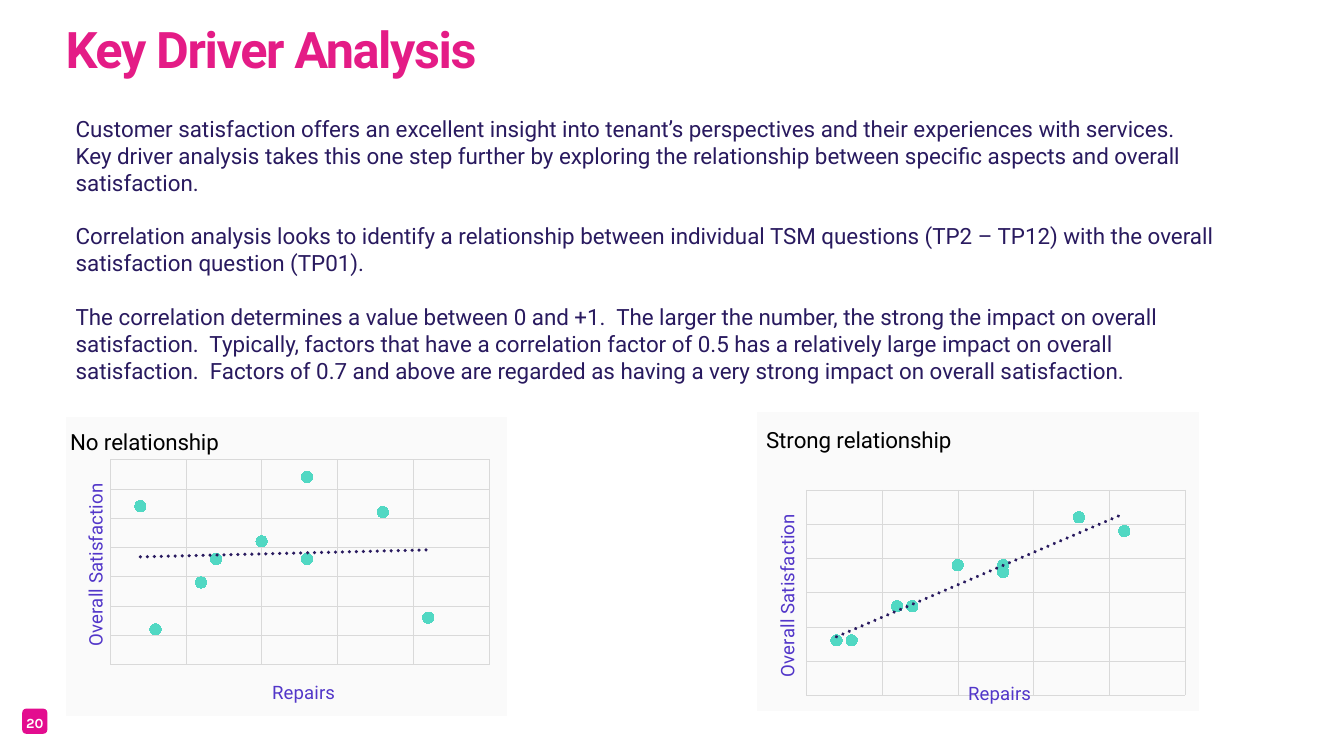
from lxml import etree
from pptx import Presentation
from pptx.chart.data import XyChartData
from pptx.dml.color import RGBColor
from pptx.enum.chart import XL_CHART_TYPE, XL_MARKER_STYLE
from pptx.enum.shapes import MSO_SHAPE
from pptx.enum.text import MSO_ANCHOR, MSO_AUTO_SIZE, PP_ALIGN
from pptx.oxml import parse_xml
from pptx.oxml.ns import nsdecls, qn
from pptx.util import Inches, Pt

SCATTER = XL_CHART_TYPE.XY_SCATTER
CIRCLE = XL_MARKER_STYLE.CIRCLE
ROUNDED = MSO_SHAPE.ROUNDED_RECTANGLE
LEFT, CENTER = PP_ALIGN.LEFT, PP_ALIGN.CENTER
TOP, BOTTOM = MSO_ANCHOR.TOP, MSO_ANCHOR.BOTTOM
NO_FIT, GROW = MSO_AUTO_SIZE.NONE, MSO_AUTO_SIZE.SHAPE_TO_FIT_TEXT

PINK = RGBColor(0xE4, 0x1C, 0x86)
BADGE_PINK = RGBColor(0xE3, 0x0D, 0x8F)
NAVY = RGBColor(0x29, 0x1A, 0x5F)
PURPLE = RGBColor(0x52, 0x36, 0xC9)
TEAL = RGBColor(0x51, 0xD8, 0xC3)
PANEL = RGBColor(0xFA, 0xFA, 0xFA)
GRID = RGBColor(0xD9, 0xD9, 0xD9)
BLACK = RGBColor(0, 0, 0)
WHITE = RGBColor(0xFF, 0xFF, 0xFF)

# Content
TITLE = "Key Driver Analysis"
PAGE_NUMBER = "20"
BODY = [
    "Customer satisfaction offers an excellent insight into tenant’s perspectives and their "
    "experiences with services.  Key driver analysis takes this one step further by exploring "
    "the relationship between specific aspects and overall satisfaction.",
    "Correlation analysis looks to identify a relationship between individual TSM questions "
    "(TP2 – TP12) with the overall satisfaction question (TP01).",
    "The correlation determines a value between 0 and +1.  The larger the number, the strong "
    "the impact on overall satisfaction.  Typically, factors that have a correlation factor of "
    "0.5 has a relatively large impact on overall satisfaction.  Factors of 0.7 and above are "
    "regarded as having a very strong impact on overall satisfaction.",
]
X_TITLE, Y_TITLE = "Repairs", "Overall Satisfaction"
REPAIRS = [0.7, 1.8, 2.6, 1.5, 0.8, 1.2, 2.3, 1.8, 1.1]
CHART_SIZE = (4.38, 2.96)
# Title and plot positions are fractions of the chart's size
CHARTS = [
    {"title": "No relationship", "at": (0.65, 4.14), "y_max": 3.5,
     "satisfaction": [2.7, 3.2, 0.8, 2.1, 0.6, 1.8, 2.6, 1.8, 1.4],
     "plot": (0.1, 0.14, 0.86, 0.69), "title_at": (0, 0.02),
     "x_title_at": (0.46, 0.87), "y_title_at": (0.03, 0.21)},
    {"title": "Strong relationship", "at": (7.51, 4.09), "y_max": 3,
     "satisfaction": [0.8, 1.9, 2.4, 1.9, 0.8, 1.3, 2.6, 1.8, 1.3],
     "plot": (0.11, 0.26, 0.86, 0.69), "title_at": (0.01, 0.03),
     "x_title_at": (0.47, 0.89), "y_title_at": (0.03, 0.33)},
]


def apply(target, **values):
    for name, value in values.items():
        setattr(target, name, value)


def set_font(font, size, color, name="Roboto", bold=False):
    apply(font, size=Pt(size), name=name, bold=bold)
    font.color.rgb = color


def place(shape, left, top, width, height):
    apply(shape, left=Inches(left), top=Inches(top),
          width=Inches(width), height=Inches(height))


def manual_layout(fractions, inner=False):
    target = '<c:layoutTarget val="inner"/>' if inner else ""
    modes = "".join(f'<c:{axis}Mode val="edge"/>' for axis in "xy")
    sizes = "".join(f'<c:{key} val="{value}"/>' for key, value in zip("xywh", fractions))
    return parse_xml(f'<c:layout {nsdecls("c")}><c:manualLayout>{target}{modes}{sizes}'
                     '</c:manualLayout></c:layout>')


def set_layout(parent, index, layout):
    for old in parent.findall(qn("c:layout")):
        parent.remove(old)
    parent.insert(index, layout)


def write_chart_title(title, text, position, size, color):
    paragraph = title.text_frame.paragraphs[0]
    run = paragraph.add_run()
    run.text = text
    set_font(run.font, size, color)
    set_layout(title._element, 1, manual_layout(position))


def format_axis(axis, minimum, maximum):
    apply(axis, minimum_scale=minimum, maximum_scale=maximum, major_unit=0.5,
          has_major_gridlines=True, visible=False)
    line = axis.major_gridlines.format.line
    line.color.rgb = GRID
    line.width = Pt(0.25)


def add_scatter(slide, panel):
    data = XyChartData()
    points = data.add_series("Series 1")
    for x, y in zip(REPAIRS, panel["satisfaction"]):
        points.add_data_point(x, y)
    box = [Inches(value) for value in panel["at"] + CHART_SIZE]
    chart = slide.shapes.add_chart(SCATTER, *box, data).chart
    apply(chart, has_legend=False, has_title=True)
    set_font(chart.font, 10, NAVY)

    # Panel and plot area
    chart_space = chart._chartSpace
    chart_element = chart_space.find(qn("c:chart"))
    chart_element.addnext(parse_xml(
        f'<c:spPr {nsdecls("c", "a")}><a:solidFill><a:srgbClr val="{PANEL}"/></a:solidFill>'
        f'<a:ln w="9525"><a:solidFill><a:srgbClr val="{PANEL}"/></a:solidFill></a:ln></c:spPr>'))
    set_layout(chart_element.find(qn("c:plotArea")), 0, manual_layout(panel["plot"], inner=True))

    # Axes and titles
    x_axis, y_axis = chart.category_axis, chart.value_axis
    format_axis(x_axis, 0.5, 3)
    format_axis(y_axis, 0, panel["y_max"])
    write_chart_title(chart.chart_title, panel["title"], panel["title_at"], 16, BLACK)
    write_chart_title(x_axis.axis_title, X_TITLE, panel["x_title_at"], 13.3, PURPLE)
    write_chart_title(y_axis.axis_title, Y_TITLE, panel["y_title_at"], 13.3, PURPLE)
    y_body = y_axis.axis_title.text_frame._txBody.find(qn("a:bodyPr"))
    y_body.set("rot", "-5400000")
    y_body.set("vert", "horz")

    # Markers and trend line
    chart.plots[0].vary_by_categories = False
    series = chart.plots[0].series[0]
    series.format.line.fill.background()
    apply(series.marker, style=CIRCLE, size=8)
    series.marker.format.fill.solid()
    series.marker.format.fill.fore_color.rgb = TEAL
    series.marker.format.line.color.rgb = TEAL
    series._element.find(qn("c:xVal")).addprevious(parse_xml(
        f'<c:trendline {nsdecls("c", "a")}><c:spPr><a:ln w="31750" cap="rnd"><a:solidFill>'
        f'<a:srgbClr val="{NAVY}"/></a:solidFill><a:prstDash val="sysDot"/></a:ln></c:spPr>'
        '<c:trendlineType val="linear"/><c:dispRSqr val="0"/><c:dispEq val="0"/></c:trendline>'))


def main():
    presentation = Presentation()
    apply(presentation, slide_width=Inches(13.33), slide_height=Inches(7.5))
    slide = presentation.slides.add_slide(presentation.slide_layouts[1])
    no_margins = dict.fromkeys(("margin_left", "margin_top", "margin_right", "margin_bottom"), 0)

    # Title
    title = slide.shapes.title
    place(title, 0.65, 0, 11.13, 0.78)
    frame = title.text_frame
    frame.text = TITLE
    apply(frame, vertical_anchor=BOTTOM, word_wrap=True, auto_size=GROW, **no_margins)
    paragraph = frame.paragraphs[0]
    apply(paragraph, alignment=LEFT, line_spacing=Pt(60))
    run = paragraph.runs[0]
    set_font(run.font, 36, PINK, bold=True)
    run.font._element.set("spc", "-100")

    # Explanation
    body = slide.placeholders[1]
    place(body, 0.65, 1.09, 11.5, 2.87)
    frame = body.text_frame
    apply(frame, vertical_anchor=TOP, word_wrap=True, auto_size=NO_FIT)
    for index, text in enumerate(BODY):
        paragraph = frame.add_paragraph() if index else frame.paragraphs[0]
        properties = paragraph._p.get_or_add_pPr()
        properties.set("marL", "0")
        properties.set("indent", "0")
        etree.SubElement(properties, qn("a:buNone"))
        apply(paragraph, alignment=LEFT, space_before=Pt(19.2 if index else 0))
        run = paragraph.add_run()
        run.text = text
        set_font(run.font, 16, NAVY)

    # Charts
    for panel in CHARTS:
        add_scatter(slide, panel)

    # Page number badge
    badge = slide.shapes.add_shape(ROUNDED, *map(Inches, (0.22, 7.03, 0.25, 0.25)))
    badge.shadow.inherit = False
    badge.fill.solid()
    badge.fill.fore_color.rgb = BADGE_PINK
    badge.line.fill.background()
    number = slide.shapes.add_textbox(*map(Inches, (0.22, 7.09, 0.25, 0.13)))
    frame = number.text_frame
    frame.text = PAGE_NUMBER
    apply(frame, word_wrap=True, auto_size=GROW, **no_margins)
    paragraph = frame.paragraphs[0]
    apply(paragraph, alignment=CENTER, line_spacing=Pt(12))
    set_font(paragraph.runs[0].font, 10, WHITE, name="Karla", bold=True)

    presentation.save("out.pptx")


if __name__ == "__main__":
    main()
